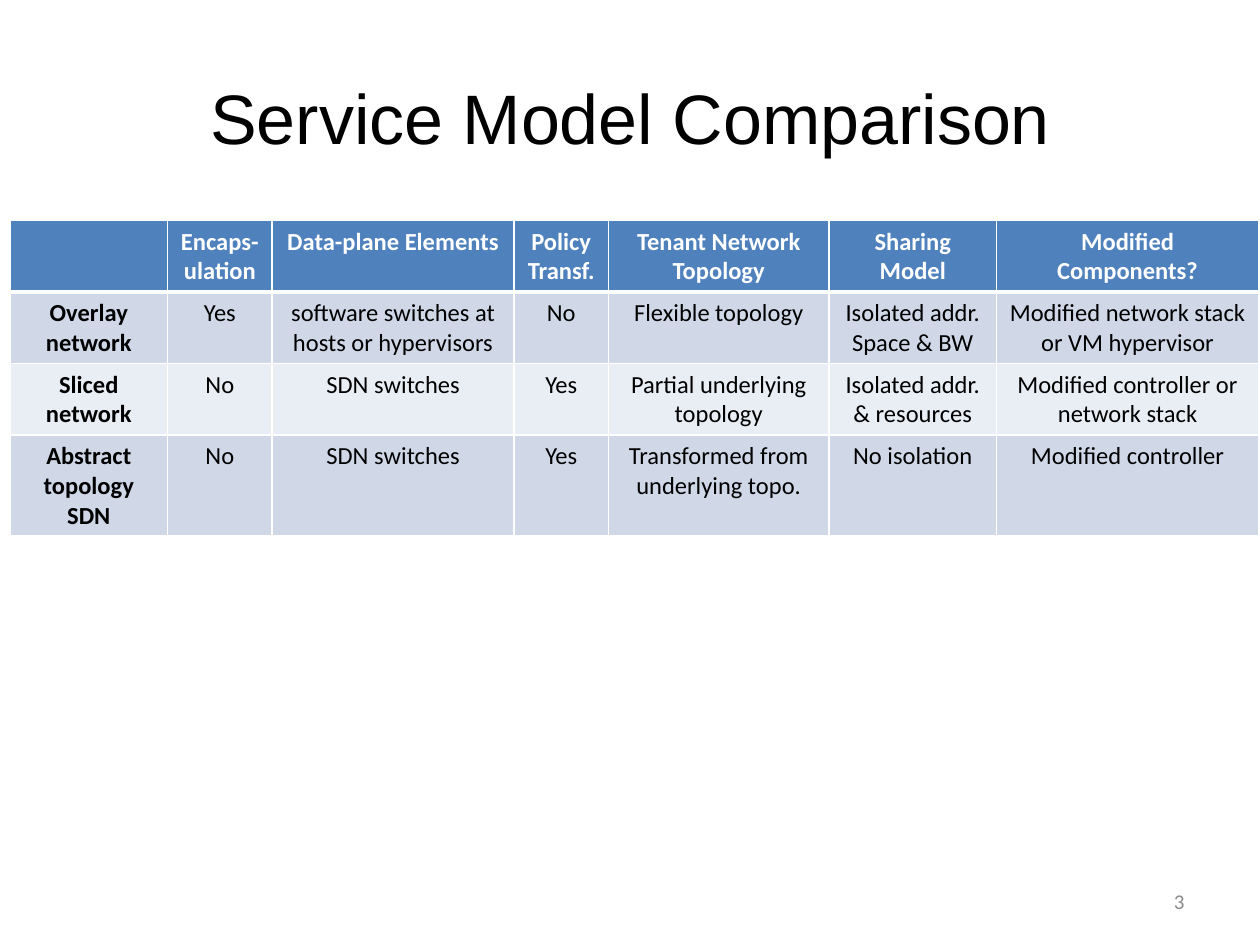
from dataclasses import dataclass

from lxml.etree import SubElement
from pptx import Presentation
from pptx.dml.color import RGBColor
from pptx.enum.text import MSO_ANCHOR, PP_ALIGN
from pptx.oxml.ns import qn
from pptx.util import Inches, Pt


@dataclass(frozen=True)
class Theme:
    title_font: str = "Arial"
    body_font: str = "Calibri"
    title_size: int = 40
    table_size: int = 14
    number_size: int = 12
    ink: str = "000000"
    paper: str = "FFFFFF"
    muted: str = "8C8C8C"
    header: str = "4F81BD"
    bands: tuple = ("D0D8E8", "E9EDF4")
    rule: int = 1
    header_rule: int = 3


THEME = Theme()
WIDTH, HEIGHT = Inches(10), Inches(7.5)
COLUMN_WIDTHS = (1.25, 0.83, 1.92, 0.75, 1.75, 1.33, 2.08)
ROW_HEIGHTS = (0.44, 0.44, 0.49, 0.44)
COMPARISON = (
    ("", "Encaps-ulation", "Data-plane Elements", "Policy Transf.",
     "Tenant Network Topology", "Sharing\nModel", "Modified Components?"),
    ("Overlay network", "Yes", "software switches at hosts or hypervisors", "No",
     "Flexible topology", "Isolated addr. Space & BW",
     "Modified network stack or VM hypervisor"),
    ("Sliced network", "No", "SDN switches", "Yes",
     "Partial underlying topology", "Isolated addr.\n& resources",
     "Modified controller or network stack"),
    ("Abstract topology SDN", "No", "SDN switches", "Yes",
     "Transformed from underlying topo.", "No isolation", "Modified controller"),
)


def write(frame, text, face, size, color, align, bold=False):
    frame.text = text
    for paragraph in frame.paragraphs:
        paragraph.alignment = align
        font = paragraph.font
        font.name, font.size, font.bold = face, Pt(size), bold
        font.color.rgb = RGBColor.from_string(color)


def add_label(slide, text, left, top, width, height, face, size, color, align):
    """Place a line of text; the box is given as shares of the slide."""
    box = slide.shapes.add_textbox(round(WIDTH * left), round(HEIGHT * top),
                                   round(WIDTH * width), round(HEIGHT * height))
    frame = box.text_frame
    frame.word_wrap = True
    frame.vertical_anchor = MSO_ANCHOR.MIDDLE
    write(frame, text, face, size, color, align)


def set_borders(cell, bottom):
    """Rule all four sides; call before the fill, which must follow them."""
    properties = cell._tc.get_or_add_tcPr()
    for side, points in (("L", THEME.rule), ("R", THEME.rule),
                         ("T", THEME.rule), ("B", bottom)):
        line = SubElement(properties, qn(f"a:ln{side}"), w=str(Pt(points)))
        fill = SubElement(line, qn("a:solidFill"))
        SubElement(fill, qn("a:srgbClr"), val=THEME.paper)


def style_cell(cell, text, row, column):
    is_header = row == 0
    set_borders(cell, THEME.header_rule if is_header else THEME.rule)
    band = THEME.bands[(row - 1) % len(THEME.bands)]
    cell.fill.solid()
    cell.fill.fore_color.rgb = RGBColor.from_string(THEME.header if is_header else band)
    write(cell.text_frame, text, THEME.body_font, THEME.table_size,
          THEME.paper if is_header else THEME.ink, PP_ALIGN.CENTER,
          bold=is_header or column == 0)


def add_comparison(slide, left, top):
    table = slide.shapes.add_table(
        len(ROW_HEIGHTS), len(COLUMN_WIDTHS), Inches(left), Inches(top),
        Inches(sum(COLUMN_WIDTHS)), Inches(sum(ROW_HEIGHTS))).table
    for column, width in zip(table.columns, COLUMN_WIDTHS):
        column.width = Inches(width)
    for row, height in zip(table.rows, ROW_HEIGHTS):
        row.height = Inches(height)
    for row, texts in enumerate(COMPARISON):
        for column, text in enumerate(texts):
            style_cell(table.cell(row, column), text, row, column)


def main():
    deck = Presentation()
    deck.slide_width, deck.slide_height = WIDTH, HEIGHT
    slide = deck.slides.add_slide(deck.slide_layouts[6])
    add_label(slide, "Service Model Comparison", 0.05, 0.04, 0.9, 1 / 6,
              THEME.title_font, THEME.title_size, THEME.ink, PP_ALIGN.CENTER)
    add_comparison(slide, 0.08, 1.75)
    add_label(slide, "3", 0.717, 0.927, 0.233, 0.053,
              THEME.body_font, THEME.number_size, THEME.muted, PP_ALIGN.RIGHT)
    deck.save("out.pptx")


if __name__ == "__main__":
    main()
